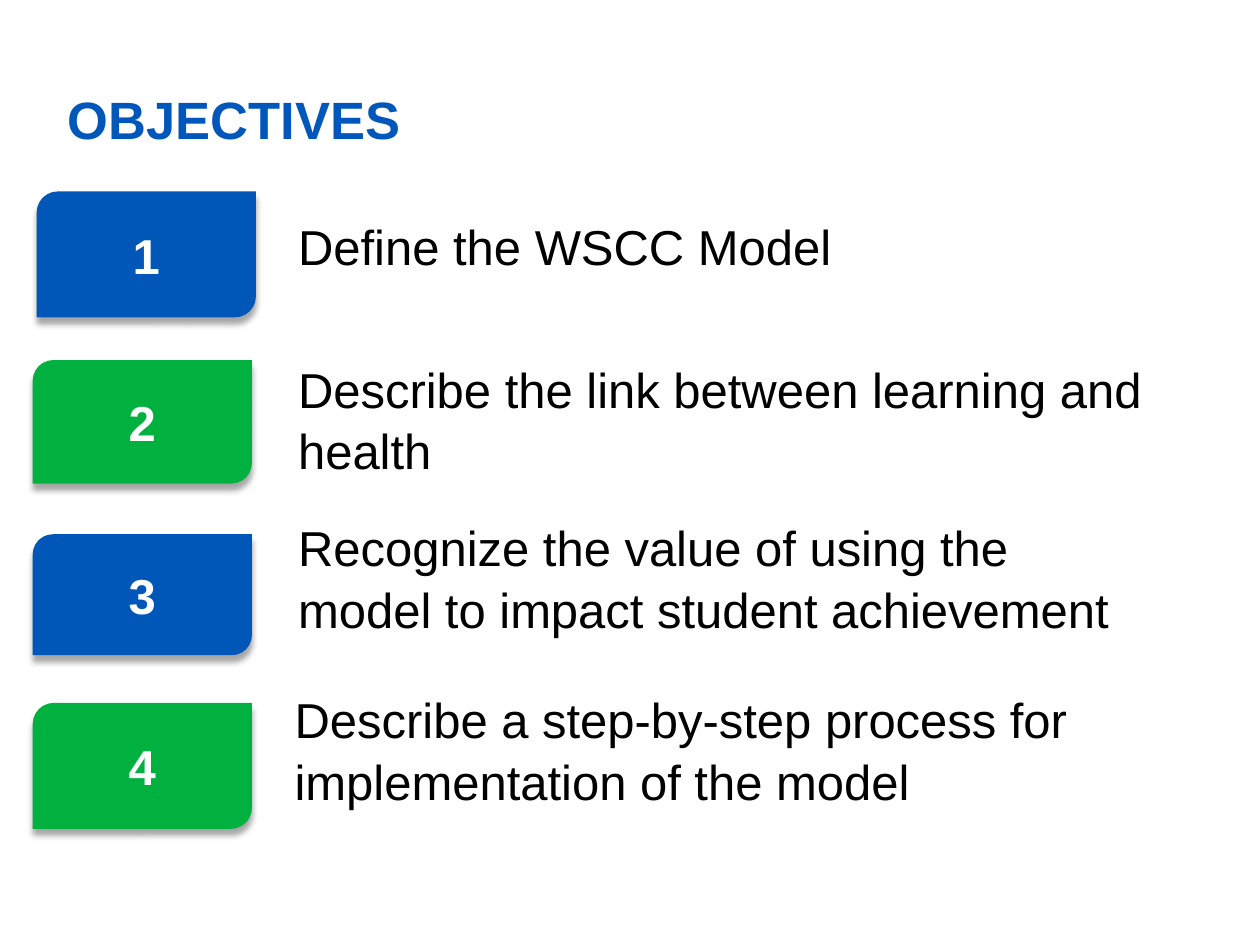
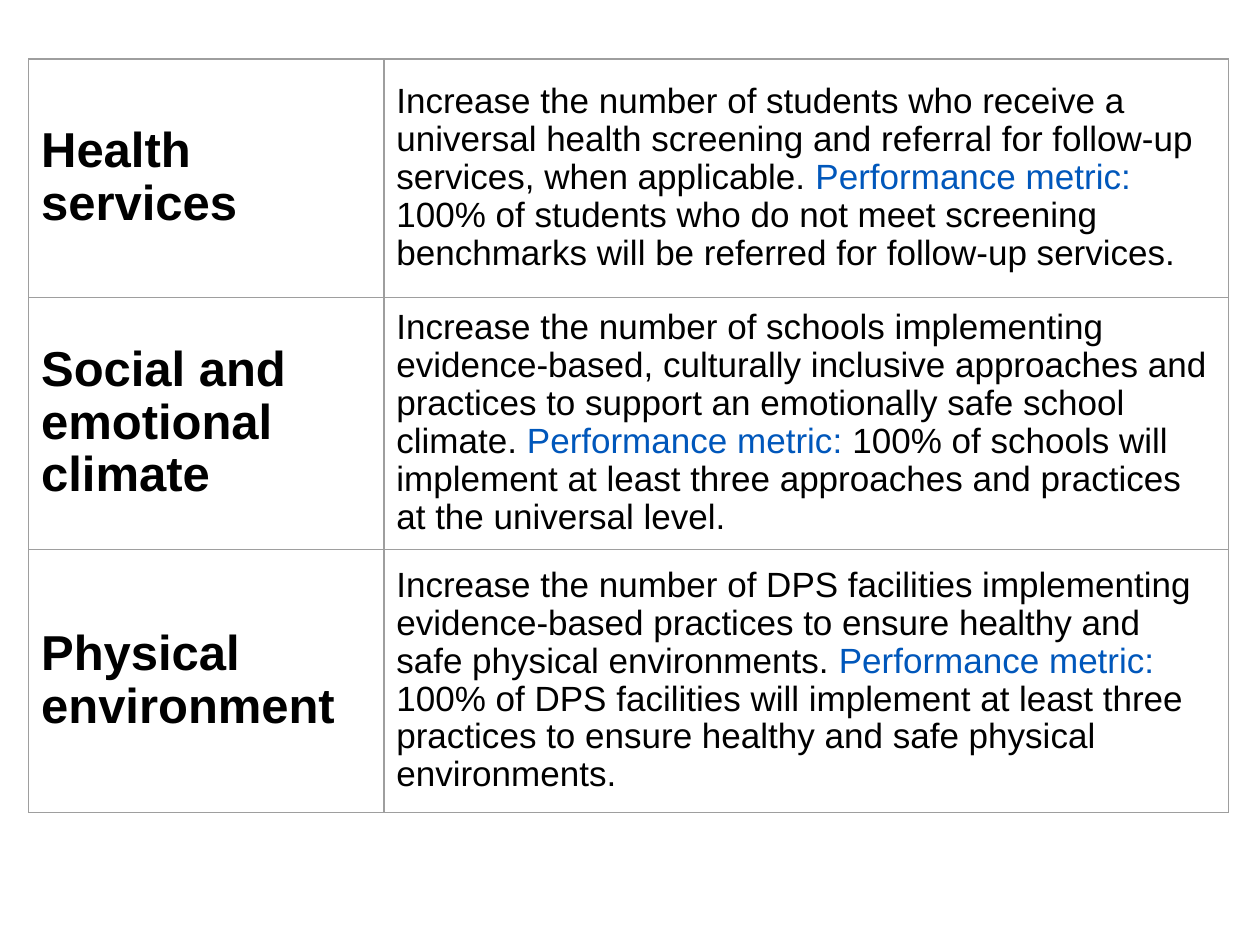
from lxml import etree
from pptx import Presentation
from pptx import util as u
from pptx.dml.color import RGBColor
from pptx.enum import shapes, text
from pptx.oxml.ns import qn

FONT = "Arial"
BLUE, GREEN, ACCENT = "0057B8", "00B140", "0057BB"
BLACK, WHITE, GREY = "000000", "FFFFFF", "9E9E9E"
INSET = 0.25
METRIC = "Performance metric: "

OBJECTIVES = [
    ("Define the WSCC Model",
     (0.74, 3.86, 4.42, 2.54), (5.56, 4.06, 19.43, 2.08)),
    ("Describe the link between learning and health",
     (0.66, 7.26, 4.42, 2.49), (5.56, 6.93, 19.84, 3.02)),
    ("Recognize the value of using the model to impact student achievement",
     (0.66, 10.77, 4.42, 2.44), (5.56, 10.13, 17.75, 3.02)),
    ("Describe a step-by-step process for implementation of the model",
     (0.66, 14.17, 4.42, 2.54), (5.49, 13.59, 17.83, 2.74)),
]

GOALS = [
    ("Health services",
     "Increase the number of students who receive a universal health screening "
     "and referral for follow-up services, when applicable. ",
     "100% of students who do not meet screening benchmarks will be referred "
     "for follow-up services."),
    ("Social and emotional climate",
     "Increase the number of schools implementing evidence-based, culturally "
     "inclusive approaches and practices to support an emotionally safe school "
     "climate. ",
     "100% of schools will implement at least three approaches and practices "
     "at the universal level."),
    ("Physical environment",
     "Increase the number of DPS facilities implementing evidence-based "
     "practices to ensure healthy and safe physical environments. ",
     "100% of DPS facilities will implement at least three practices to ensure "
     "healthy and safe physical environments."),
]


def rgb(value):
    return RGBColor.from_string(value)


def cm(box):
    return [u.Cm(v) for v in box]


def style(p, size, color, bold=False, align=text.PP_ALIGN.LEFT, spacing=None):
    p.alignment = align
    p.line_spacing = spacing
    p.font.name = FONT
    p.font.size = u.Pt(size)
    p.font.bold = bold
    p.font.color.rgb = rgb(color)


def set_insets(frame, vertical=INSET):
    frame.margin_left = frame.margin_right = u.Cm(INSET)
    frame.margin_top = frame.margin_bottom = u.Cm(vertical)


def fill_text(sp, box, words, size, color, bold=False):
    sp.left, sp.top, sp.width, sp.height = cm(box)
    tf = sp.text_frame
    tf.word_wrap = True
    tf.auto_size = text.MSO_AUTO_SIZE.NONE
    tf.vertical_anchor = text.MSO_ANCHOR.TOP
    set_insets(tf)
    tf.text = words
    p = tf.paragraphs[0]
    p.space_before = u.Pt(0)
    style(p, size, color, bold, spacing=1.05)
    return p


def objective(sp, box, words):
    p = fill_text(sp, box, words, 28, BLACK)
    pPr = p._p.get_or_add_pPr()
    pPr.set("marL", str(u.Cm(0.2)))
    pPr.set("indent", "0")
    bullet = etree.Element(qn("a:buNone"))
    pPr.find(qn("a:defRPr")).addprevious(bullet)


def add_shadow(sp):
    sp.shadow.inherit = False
    effects = sp._element.spPr.find(qn("a:effectLst"))
    shadow = etree.SubElement(effects, qn("a:outerShdw"), blurRad=str(u.Pt(3.6)),
                              dist=str(u.Pt(3.8)), dir="5400000", rotWithShape="0")
    color = etree.SubElement(shadow, qn("a:srgbClr"), val=BLACK)
    etree.SubElement(color, qn("a:alpha"), val="35000")


def badge(s, box, number):
    sp = s.shapes.add_shape(shapes.MSO_SHAPE.ROUND_2_DIAG_RECTANGLE, *cm(box))
    sp.adjustments[0], sp.adjustments[1] = 0.167, 0
    sp.fill.solid()
    sp.fill.fore_color.rgb = rgb(BLUE if number % 2 else GREEN)
    sp.line.fill.background()
    add_shadow(sp)
    tf = sp.text_frame
    tf.vertical_anchor = text.MSO_ANCHOR.MIDDLE
    set_insets(tf, 0.13)
    tf.text = str(number)
    style(tf.paragraphs[0], 28, WHITE, True, text.PP_ALIGN.CENTER)


def objectives_slide(prs):
    s = prs.slides.add_slide(prs.slide_layouts[1])
    fill_text(s.shapes.title, (1.12, 1.45, 23.19, 1.42), "OBJECTIVES", 30, ACCENT, True)
    for number, (words, badge_box, text_box) in enumerate(OBJECTIVES, 1):
        badge(s, badge_box, number)
        sp = s.placeholders[1] if number == 1 else s.shapes.add_textbox(*cm(text_box))
        objective(sp, text_box, words)


def format_cell(cell):
    cell.fill.background()
    cell.vertical_anchor = text.MSO_ANCHOR.MIDDLE
    set_insets(cell)
    tcPr = cell._tc.get_or_add_tcPr()
    for i, side in enumerate("LRTB"):
        ln = etree.Element(qn(f"a:ln{side}"), w=str(u.Pt(0.75)))
        solid = etree.SubElement(ln, qn("a:solidFill"))
        etree.SubElement(solid, qn("a:srgbClr"), val=GREY)
        tcPr.insert(i, ln)


def goals_table(s, left, top, widths, heights):
    frame = s.shapes.add_table(len(GOALS), len(widths),
                               *cm((left, top, sum(widths), sum(heights))))
    table = frame.table
    table.first_row = table.horz_banding = False
    for column, width in zip(table.columns, widths):
        column.width = u.Cm(width)
    for row, height, (area, goal, target) in zip(table.rows, heights, GOALS):
        row.height = u.Cm(height)
        for cell in row.cells:
            format_cell(cell)
        name, detail = row.cells
        name.text = area
        style(name.text_frame.paragraphs[0], 28, BLACK, True, spacing=0.97)
        p = detail.text_frame.paragraphs[0]
        style(p, 20, BLACK, spacing=0.97)
        for words, color in ((goal, BLACK), (METRIC, ACCENT), (target, BLACK)):
            r = p.add_run()
            r.text = words
            r.font.name = FONT
            r.font.size = u.Pt(20)
            r.font.color.rgb = rgb(color)


def goals_slide(prs):
    s = prs.slides.add_slide(prs.slide_layouts[6])
    goals_table(s, 0.58, 1.19, (7.16, 17.02), (4.8, 4.78, 5.31))


def main():
    prs = Presentation()
    prs.slide_width, prs.slide_height = u.Cm(25.4), u.Cm(19.05)
    objectives_slide(prs)
    goals_slide(prs)
    prs.save("out.pptx")


if __name__ == "__main__":
    main()
